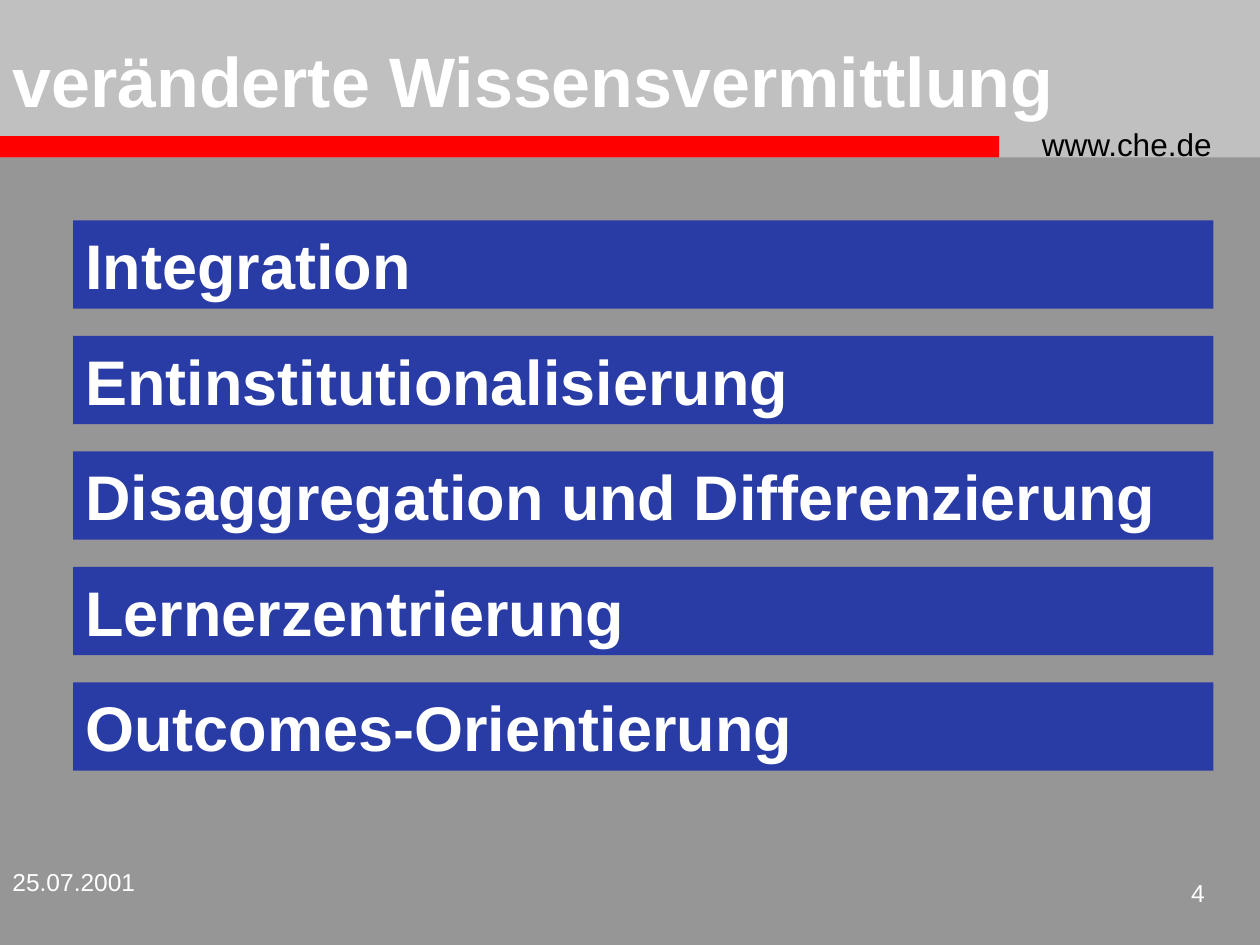
from pptx import Presentation
from pptx.dml.color import RGBColor
from pptx.enum.shapes import MSO_SHAPE as Shape
from pptx.enum.text import MSO_ANCHOR as Anchor, PP_ALIGN as Align
from pptx.util import Inches, Pt

COLORS = {
    "background": "969696",
    "header": "C0C0C0",
    "stripe": "FF0000",
    "bar": "293BA5",
    "light": "FFFFFF",
    "dark": "000000",
}
FONT = "Arial"

BANDS = [
    ((0, 0, 10, 1.25), "header"),
    ((0, 1.08, 7.93, 0.17), "stripe"),
]
LABELS = [
    ("www.che.de", (8.17, 0.94, 1.75, 0.4), 18, "dark", False, Align.LEFT),
    ("25.07.2001", (0, 6.83, 2.08, 0.5), 14, "light", False, Align.LEFT),
    ("4", (9.08, 6.92, 0.58, 0.42), 14, "light", False, Align.RIGHT),
    ("veränderte Wissensvermittlung", (0, 0.25, 8.58, 0.77), 40, "light", True, Align.LEFT),
]
TOPICS = [
    "Integration",
    "Entinstitutionalisierung",
    "Disaggregation und Differenzierung",
    "Lernerzentrierung",
    "Outcomes-Orientierung",
]
BAR_LEFT, BAR_TOP, BAR_WIDTH, BAR_HEIGHT = 0.58, 1.75, 9.05, 0.7
BAR_PITCH = 5.5 / 6


def color(name):
    return RGBColor.from_string(COLORS[name])


def add_rectangle(slide, place, fill):
    shape = slide.shapes.add_shape(Shape.RECTANGLE, *map(Inches, place))
    shape.shadow.inherit = False
    shape.fill.solid()
    shape.fill.fore_color.rgb = color(fill)
    shape.line.fill.background()
    return shape


def write(shape, text, size, ink, bold, align=Align.LEFT):
    frame = shape.text_frame
    frame.word_wrap = True
    frame.vertical_anchor = Anchor.TOP
    para = frame.paragraphs[0]
    para.alignment = align
    span = para.add_run()
    span.text = text
    span.font.name = FONT
    span.font.size = Pt(size)
    span.font.bold = bold
    span.font.color.rgb = color(ink)


def main():
    deck = Presentation()
    deck.slide_width, deck.slide_height = Inches(10), Inches(7.5)
    slide = deck.slides.add_slide(deck.slide_layouts[6])
    slide.background.fill.solid()
    slide.background.fill.fore_color.rgb = color("background")

    for place, fill in BANDS:
        add_rectangle(slide, place, fill)
    for text, place, size, ink, bold, align in LABELS:
        box = slide.shapes.add_textbox(*map(Inches, place))
        write(box, text, size, ink, bold, align)
    for row, topic in enumerate(TOPICS):
        place = (BAR_LEFT, BAR_TOP + row * BAR_PITCH, BAR_WIDTH, BAR_HEIGHT)
        write(add_rectangle(slide, place, "bar"), topic, 36, "light", True)

    deck.save("out.pptx")


if __name__ == "__main__":
    main()
